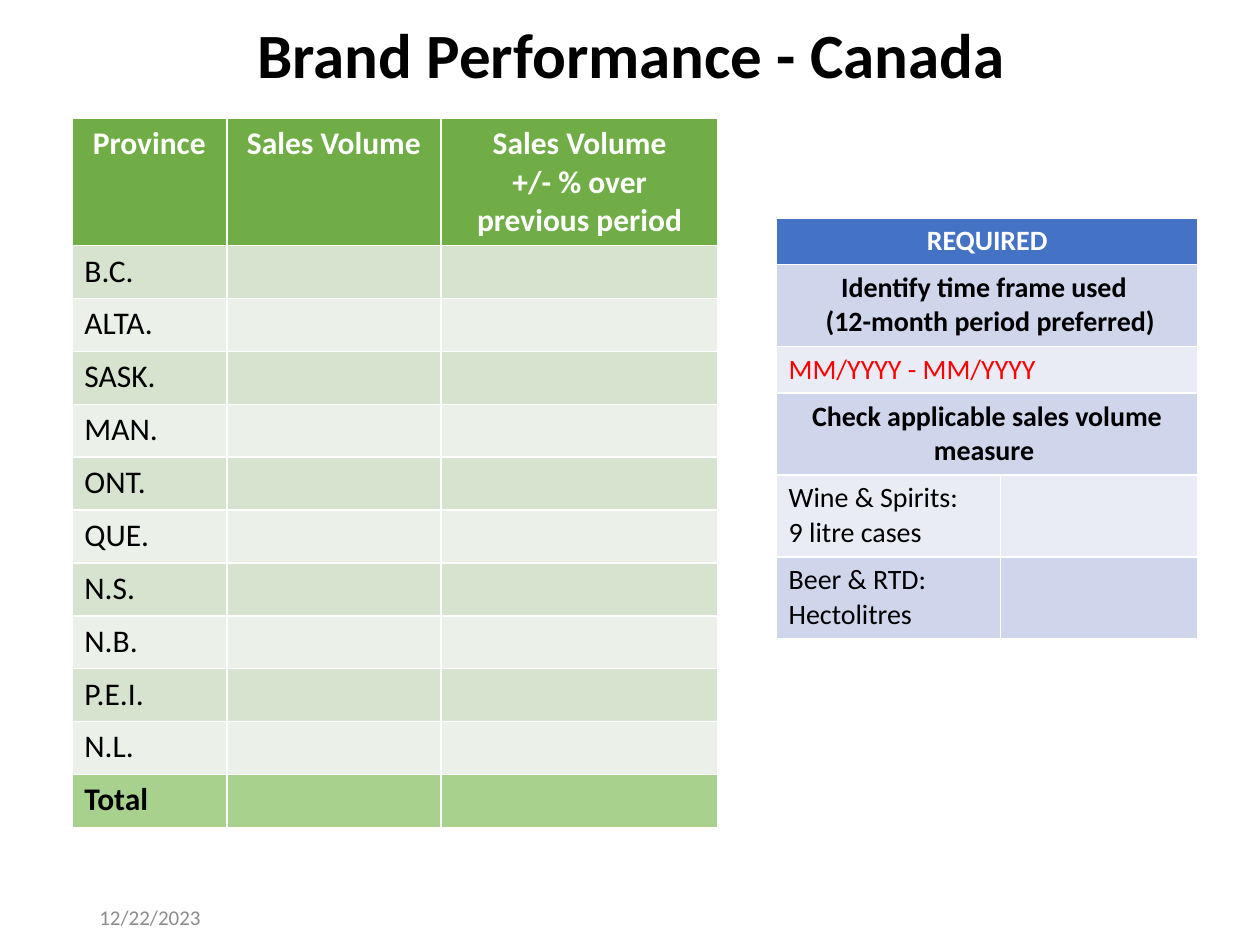
from pptx import Presentation
from pptx.dml.color import RGBColor
from pptx.enum.text import MSO_ANCHOR, PP_ALIGN
from pptx.util import Inches, Pt

FONT = "Calibri"
COLORS = {
    "black": "000000", "white": "FFFFFF", "red": "FF0000", "gray": "8C8C8C",
    "green": "70AD47", "green_band": "D5E3CF", "green_light": "EBF1E9",
    "green_total": "A9D18E",
    "blue": "4472C4", "blue_band": "CFD5EA", "blue_light": "E9EBF5",
}

# Content
TITLE = "Brand Performance - Canada"
DATE = "12/22/2023"
SALES_HEADERS = ["Province", "Sales Volume", "Sales Volume\n+/- % over previous period"]
PROVINCES = ["B.C.", "ALTA.", "SASK.", "MAN.", "ONT.", "QUE.", "N.S.", "N.B.", "P.E.I.", "N.L."]
# Text, height, text colour, heading (bold and centred), spans both columns
REQUIRED_ROWS = [
    ("REQUIRED", 0.37, "white", True, True),
    ("Identify time frame used \n (12-month period preferred)", 0.65, "black", True, True),
    ("MM/YYYY - MM/YYYY", 0.37, "red", False, True),
    ("Check applicable sales volume measure ", 0.65, "black", True, True),
    ("Wine & Spirits: \n9 litre cases", 0.65, "black", False, False),
    ("Beer & RTD: Hectolitres", 0.65, "black", False, False),
]


def write(text_frame, text, size, color, bold=False, align=PP_ALIGN.LEFT):
    text_frame.text = text
    for paragraph in text_frame.paragraphs:
        paragraph.alignment = align
        paragraph.font.size = Pt(size)
        for run in paragraph.runs:
            run.font.name = FONT
            run.font.size = Pt(size)
            run.font.bold = bold
            run.font.color.rgb = RGBColor.from_string(COLORS[color])


def add_grid(slide, left, top, widths, heights, fills):
    """Add a table with one fill colour per row."""
    table = slide.shapes.add_table(
        len(heights), len(widths), Inches(left), Inches(top),
        Inches(sum(widths)), Inches(sum(heights))).table
    for column, width in zip(table.columns, widths):
        column.width = Inches(width)
    for row, height, fill in zip(table.rows, heights, fills):
        row.height = Inches(height)
        for cell in row.cells:
            cell.fill.solid()
            cell.fill.fore_color.rgb = RGBColor.from_string(COLORS[fill])
    return table


def band_fills(header, bands, count):
    return [header] + [bands[i % 2] for i in range(count)]


presentation = Presentation()
presentation.slide_width, presentation.slide_height = Inches(10), Inches(7.5)
slide = presentation.slides.add_slide(presentation.slide_layouts[5])

# Title
title = slide.shapes.title
title.left, title.top, title.width, title.height = map(Inches, (0.51, 0.13, 9, 0.67))
write(title.text_frame, TITLE, 36, "black", True, PP_ALIGN.CENTER)
title.text_frame.vertical_anchor = MSO_ANCHOR.MIDDLE
title.text_frame.paragraphs[0].line_spacing = 0.9

# Date
date_box = slide.shapes.add_textbox(Inches(0.69), Inches(7.2), Inches(2.25), Inches(0.15))
date_box.text_frame.word_wrap = True
date_box.text_frame.vertical_anchor = MSO_ANCHOR.MIDDLE
write(date_box.text_frame, DATE, 12, "gray")

# Sales by province
province_count = len(PROVINCES)
sales = add_grid(
    slide, 0.57, 0.94, [1.23, 1.7, 2.2], [1.01] + [0.42] * (province_count + 1),
    band_fills("green", ["green_band", "green_light"], province_count) + ["green_total"])
for column, header in enumerate(SALES_HEADERS):
    write(sales.cell(0, column).text_frame, header, 18, "white", True, PP_ALIGN.CENTER)
for row, province in enumerate(PROVINCES, 1):
    write(sales.cell(row, 0).text_frame, province, 18, "black")
write(sales.cell(province_count + 1, 0).text_frame, "Total ", 18, "black", True)

# Required details
required = add_grid(
    slide, 6.16, 1.73, [1.78, 1.57], [row[1] for row in REQUIRED_ROWS],
    band_fills("blue", ["blue_band", "blue_light"], len(REQUIRED_ROWS) - 1))
for row, (text, _, color, heading, spans) in enumerate(REQUIRED_ROWS):
    cell = required.cell(row, 0)
    if spans:
        cell.merge(required.cell(row, 1))
    align = PP_ALIGN.CENTER if heading else PP_ALIGN.LEFT
    write(cell.text_frame, text, 16, color, heading, align)

presentation.save("out.pptx")
